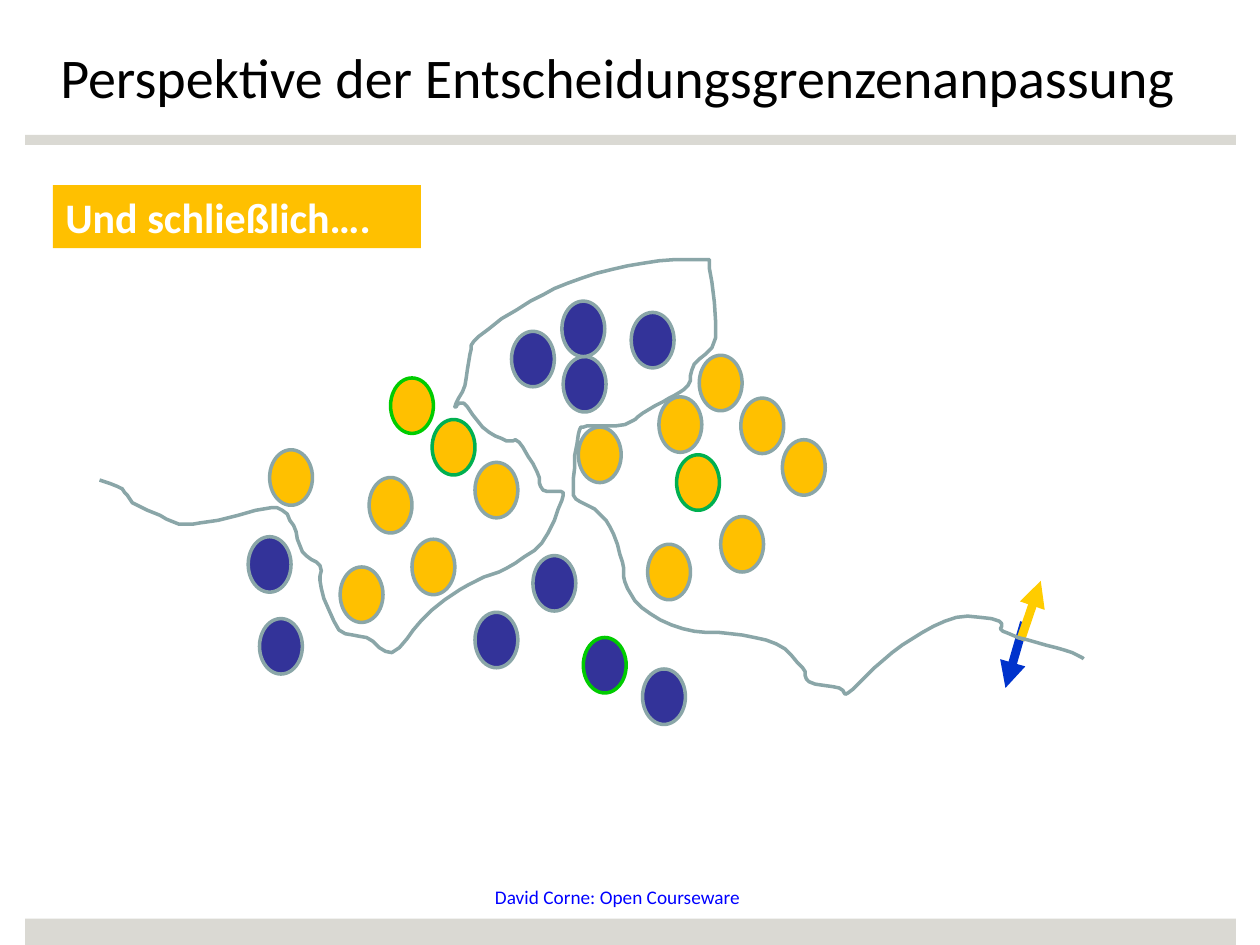
from lxml.etree import SubElement
from pptx import Presentation
from pptx.dml.color import RGBColor
from pptx.enum.shapes import MSO_CONNECTOR, MSO_SHAPE
from pptx.enum.text import MSO_ANCHOR, PP_ALIGN
from pptx.oxml.ns import qn
from pptx.util import Pt

PX = 9144  # 100 px to the inch
BLACK = RGBColor(0x00, 0x00, 0x00)
WHITE = RGBColor(0xFF, 0xFF, 0xFF)
BAND = RGBColor(0xDA, 0xD9, 0xD3)
SLATE = RGBColor(0x8A, 0xA6, 0xA8)
INDIGO = RGBColor(0x33, 0x33, 0x99)
AMBER = RGBColor(0xFF, 0xC0, 0x00)
LIME = RGBColor(0x00, 0xCC, 0x00)
GREEN = RGBColor(0x00, 0xB0, 0x50)
BLUE = RGBColor(0x00, 0x33, 0xCC)
YELLOW = RGBColor(0xFF, 0xCC, 0x00)
LINK_BLUE = RGBColor(0x00, 0x00, 0xFF)


def add_filled(kind, left, top, width, height, fill):
    shape = slide.shapes.add_shape(kind, left * PX, top * PX, width * PX, height * PX)
    shape.shadow.inherit = False
    shape.fill.solid()
    shape.fill.fore_color.rgb = fill
    shape.line.fill.background()
    return shape


def write(box, text, size, color, bold=False):
    frame = box.text_frame
    frame.word_wrap = True
    frame.vertical_anchor = MSO_ANCHOR.TOP
    para = frame.paragraphs[0]
    para.alignment = PP_ALIGN.LEFT
    span = para.add_run()
    span.text = text
    for name, value in {"name": "Calibri", "size": Pt(size), "bold": bold}.items():
        setattr(span.font, name, value)
    span.font.color.rgb = color


deck = Presentation()
deck.slide_width = 1000 * PX
deck.slide_height = 750 * PX
slide = deck.slides.add_slide(deck.slide_layouts[6])

# Bands and title
for top, height in [(107, 8), (729, 21)]:
    add_filled(MSO_SHAPE.RECTANGLE, 20, top, 961, height, BAND)
title = slide.shapes.add_textbox(38 * PX, 29 * PX, 962 * PX, 82 * PX)
write(title, "Perspektive der Entscheidungsgrenzenanpassung", 32, BLACK)

# Data points of both classes; green outlines mark single points
DATA_POINTS = {
    (INDIGO, SLATE): [(510, 531), (406, 263), (206, 491), (197, 426), (501, 248),
                      (447, 283), (377, 486), (423, 441), (446, 239)],
    (INDIGO, LIME): [(463, 506)],
    (AMBER, SLATE): [(293, 379), (327, 428), (377, 367), (270, 450), (214, 357),
                     (555, 282), (588, 316), (572, 410), (621, 349), (514, 432),
                     (459, 339), (523, 315)],
    (AMBER, LIME): [(310, 300)],
    (AMBER, GREEN): [(343, 333), (537, 361)],
}
for (fill, outline), places in DATA_POINTS.items():
    for left, top in places:
        data_point = add_filled(MSO_SHAPE.OVAL, left, top, 34, 44, fill)
        data_point.line.color.rgb = outline
        data_point.line.width = Pt(2)

# Arrows to either side of the boundary
for start_x, start_y, end_x, end_y, color in [(813, 494, 798, 546, BLUE),
                                              (810, 508, 826, 461, YELLOW)]:
    arrow = slide.shapes.add_connector(
        MSO_CONNECTOR.STRAIGHT, start_x * PX, start_y * PX, end_x * PX, end_y * PX)
    arrow.line.color.rgb = color
    arrow.line.width = Pt(5)
    properties = arrow._element.spPr
    SubElement(properties.find(qn("a:ln")), qn("a:tailEnd"), type="triangle")
    SubElement(properties, qn("a:effectLst"))

caption = add_filled(MSO_SHAPE.RECTANGLE, 42, 147, 292, 50, AMBER)
write(caption, "Und schließlich….", 24, WHITE, bold=True)

# Decision boundary: a smooth curve through its bends
BENDS = [
    (79, 381), (97, 388), (105, 399), (122, 407), (142, 416), (166, 414),
    (196, 407), (220, 403), (233, 417), (240, 438), (254, 449), (255, 467),
    (269, 500), (291, 506), (311, 518), (334, 493), (353, 476), (378, 461),
    (402, 451), (430, 431), (446, 397), (445, 390), (431, 389), (426, 374),
    (412, 351), (402, 350), (383, 339), (368, 320), (361, 323), (369, 306),
    (373, 281), (380, 267), (421, 239), (461, 221), (510, 209), (557, 206),
    (563, 213), (568, 268), (551, 289), (546, 306), (531, 316), (510, 328),
    (496, 337), (466, 338), (459, 345), (455, 380), (457, 396), (472, 404),
    (484, 418), (494, 446), (496, 462), (509, 482), (542, 499), (580, 503),
    (616, 511), (637, 530), (642, 541), (666, 546), (673, 550), (694, 530),
    (724, 507), (759, 490), (793, 493), (796, 501), (823, 510), (851, 518),
    (860, 523),
]
STEPS = 4
curve = []
padded = BENDS[:1] + BENDS + BENDS[-1:]
for before, start, end, after in zip(padded, padded[1:], padded[2:], padded[3:]):
    for step in range(1, STEPS + 1):
        t = step / STEPS
        curve.append(tuple(
            b + t * (c - a + t * (2 * a - 5 * b + 4 * c - d + t * (3 * b - a - 3 * c + d))) / 2
            for a, b, c, d in zip(before, start, end, after)))
builder = slide.shapes.build_freeform(*BENDS[0], scale=PX)
builder.add_line_segments(curve, close=False)
boundary = builder.convert_to_shape()
boundary.shadow.inherit = False
boundary.fill.background()
boundary.line.color.rgb = SLATE
boundary.line.width = Pt(2)

credit = slide.shapes.add_textbox(383 * PX, 698 * PX, 222 * PX, 29 * PX)
write(credit, "David Corne: Open Courseware", 11, LINK_BLUE)

deck.save("out.pptx")
